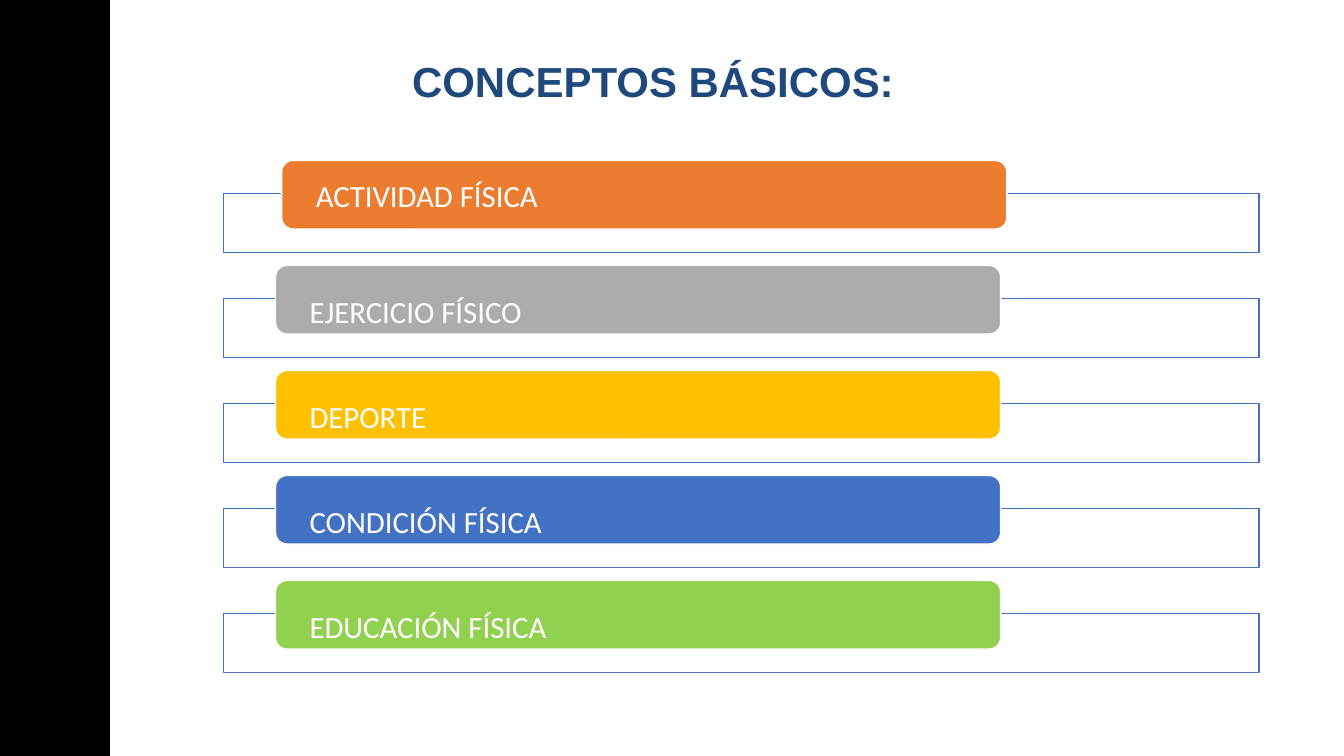
import pptx
import pptx.util
import pptx.dml.color
import pptx.enum.shapes
import pptx.enum.text

Pt = pptx.util.Pt
RGBColor = pptx.dml.color.RGBColor
SHAPE = pptx.enum.shapes.MSO_SHAPE
ANCHOR = pptx.enum.text.MSO_ANCHOR
ALIGN = pptx.enum.text.PP_ALIGN

BLACK = RGBColor(0x00, 0x00, 0x00)
WHITE = RGBColor(0xFF, 0xFF, 0xFF)
NAVY = RGBColor(0x1F, 0x48, 0x7C)
BLUE = RGBColor(0x43, 0x71, 0xC3)
ORANGE = RGBColor(0xEC, 0x7C, 0x30)
GRAY = RGBColor(0xAD, 0xAB, 0xAB)
YELLOW = RGBColor(0xFF, 0xC0, 0x00)
GREEN = RGBColor(0x92, 0xD0, 0x50)

ROW_PITCH = 75
# label, fill, bar left, space above the label
CONCEPTS = [
    ("ACTIVIDAD FÍSICA", ORANGE, 201.2, 9.5),
    ("EJERCICIO FÍSICO", GRAY, 196.8, 17),
    ("DEPORTE", YELLOW, 196.8, 17),
    ("CONDICIÓN FÍSICA", BLUE, 196.8, 17),
    ("EDUCACIÓN FÍSICA", GREEN, 196.8, 17),
]


def add_box(kind, left, top, width, height, fill, line):
    """Add a shape without shadow; a fill of None leaves it hollow."""
    sp = s.shapes.add_shape(kind, Pt(left), Pt(top), Pt(width), Pt(height))
    sp.shadow.inherit = False
    if fill is None:
        sp.fill.background()
    else:
        sp.fill.solid()
        sp.fill.fore_color.rgb = fill
    sp.line.color.rgb = line
    sp.line.width = Pt(1)
    return sp


def write(sp, text, left, top, color, font):
    """Put one left-aligned line into a shape, inset from its top left."""
    tf = sp.text_frame
    frame = {"margin_left": Pt(left), "margin_top": Pt(top), "margin_right": 0,
             "margin_bottom": 0, "vertical_anchor": ANCHOR.TOP, "word_wrap": True}
    for name, value in frame.items():
        setattr(tf, name, value)
    p = tf.paragraphs[0]
    p.alignment = ALIGN.LEFT
    r = p.add_run()
    r.text = text
    for name, value in font.items():
        setattr(r.font, name, value)
    r.font.color.rgb = color


prs = pptx.Presentation()
prs.slide_width, prs.slide_height = Pt(960), Pt(540)
s = prs.slides.add_slide(prs.slide_layouts[6])

add_box(SHAPE.RECTANGLE, 0, 0, 78, 540, BLACK, BLACK)

title = s.shapes.add_textbox(Pt(293.8), Pt(37.5), Pt(352), Pt(38))
write(title, "CONCEPTOS BÁSICOS:", 0.5, 2, NAVY,
      {"name": "Arial", "size": Pt(30), "bold": True})

for i, (label, color, left, space) in enumerate(CONCEPTS):
    y = i * ROW_PITCH
    add_box(SHAPE.RECTANGLE, 159.8, 138.4 + y, 739.5, 41.8, None, BLUE)
    bar = add_box(SHAPE.ROUNDED_RECTANGLE, left, 114.6 + y, 518, 49, color, WHITE)
    write(bar, label, 22, space, WHITE, {"name": "Calibri", "size": Pt(22)})

prs.save("out.pptx")
